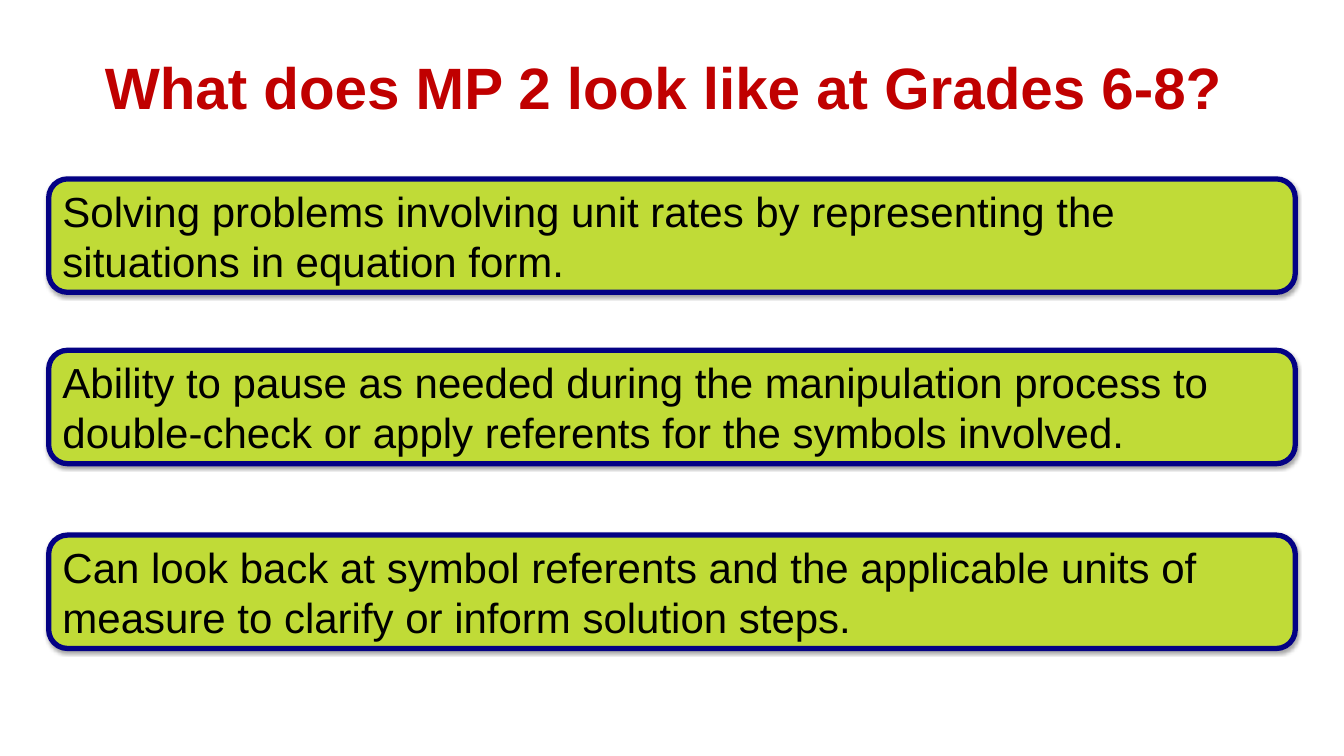
from dataclasses import dataclass

from lxml import etree
from pptx import Presentation, util as u
from pptx.dml.color import RGBColor
from pptx.enum import shapes, text
from pptx.oxml.ns import qn

WIDTH, HEIGHT = 16, 9
FONT = "Arial"
RED, LIME, NAVY, BLACK = "C00000", "C0DB37", "040284", "000000"

# Shared column of the practice boxes, in inches
BOX_LEFT, BOX_HEIGHT = 0.58, 1.35
BOX_WIDTH = WIDTH - 2 * BOX_LEFT


@dataclass
class Practice:
    top: float
    wording: str


PRACTICES = [
    Practice(2.13, "Solving problems involving unit rates by representing the "
                   "situations in equation form."),
    Practice(4.17, "Ability to pause as needed during the manipulation process to "
                   "double-check or apply referents for the symbols involved."),
    Practice(6.37, "Can look back at symbol referents and the applicable units of "
                   "measure to clarify or inform solution steps."),
]


def rgb(value: str) -> RGBColor:
    return RGBColor.from_string(value)


def place(sp, left: float, top: float, width: float, height: float) -> None:
    sp.left, sp.top = u.Inches(left), u.Inches(top)
    sp.width, sp.height = u.Inches(width), u.Inches(height)


def write(tf, wording: str, size: float, color: str, bold: bool = False,
          align=text.PP_ALIGN.LEFT) -> None:
    tf.word_wrap = True
    tf.vertical_anchor = text.MSO_ANCHOR.MIDDLE
    p = tf.paragraphs[0]
    p.alignment = align
    r = p.add_run()
    r.text = wording
    r.font.name, r.font.size, r.font.bold = FONT, u.Pt(size), bold
    r.font.color.rgb = rgb(color)


def add_shadow(sp, color: str, opacity: int, blur: float, distance: float) -> None:
    """Cast a soft shadow straight down."""
    sp.shadow.inherit = False
    effects = sp._element.spPr.find(qn("a:effectLst"))
    shadow = etree.SubElement(effects, qn("a:outerShdw"), blurRad=str(u.Pt(blur)),
                              dist=str(u.Pt(distance)), dir=str(90 * 60000),
                              rotWithShape="0")
    tint = etree.SubElement(shadow, qn("a:srgbClr"), val=color)
    etree.SubElement(tint, qn("a:alpha"), val=str(opacity * 1000))


def add_practice(s, practice: Practice) -> None:
    sp = s.shapes.add_shape(shapes.MSO_SHAPE.ROUNDED_RECTANGLE, 0, 0, 0, 0)
    place(sp, BOX_LEFT, practice.top, BOX_WIDTH, BOX_HEIGHT)
    sp.fill.solid()
    sp.fill.fore_color.rgb = rgb(LIME)
    sp.line.color.rgb = rgb(NAVY)
    sp.line.width = u.Pt(4.5)
    add_shadow(sp, BLACK, opacity=35, blur=3.1, distance=1.8)
    write(sp.text_frame, practice.wording, 36, BLACK)


def main() -> None:
    prs = Presentation()
    prs.slide_width, prs.slide_height = u.Inches(WIDTH), u.Inches(HEIGHT)
    s = prs.slides.add_slide(prs.slide_layouts[5])

    # Title
    title = s.shapes.title
    place(title, 0.05 * WIDTH, 0.6, 0.9 * WIDTH, 0.84)
    tf = title.text_frame
    tf.margin_left = tf.margin_right = tf.margin_top = tf.margin_bottom = 0
    write(tf, "What does MP 2 look like at Grades 6-8? ", 50, RED, bold=True,
          align=text.PP_ALIGN.CENTER)

    # Practice boxes
    for practice in PRACTICES:
        add_practice(s, practice)

    prs.save("out.pptx")


if __name__ == "__main__":
    main()
